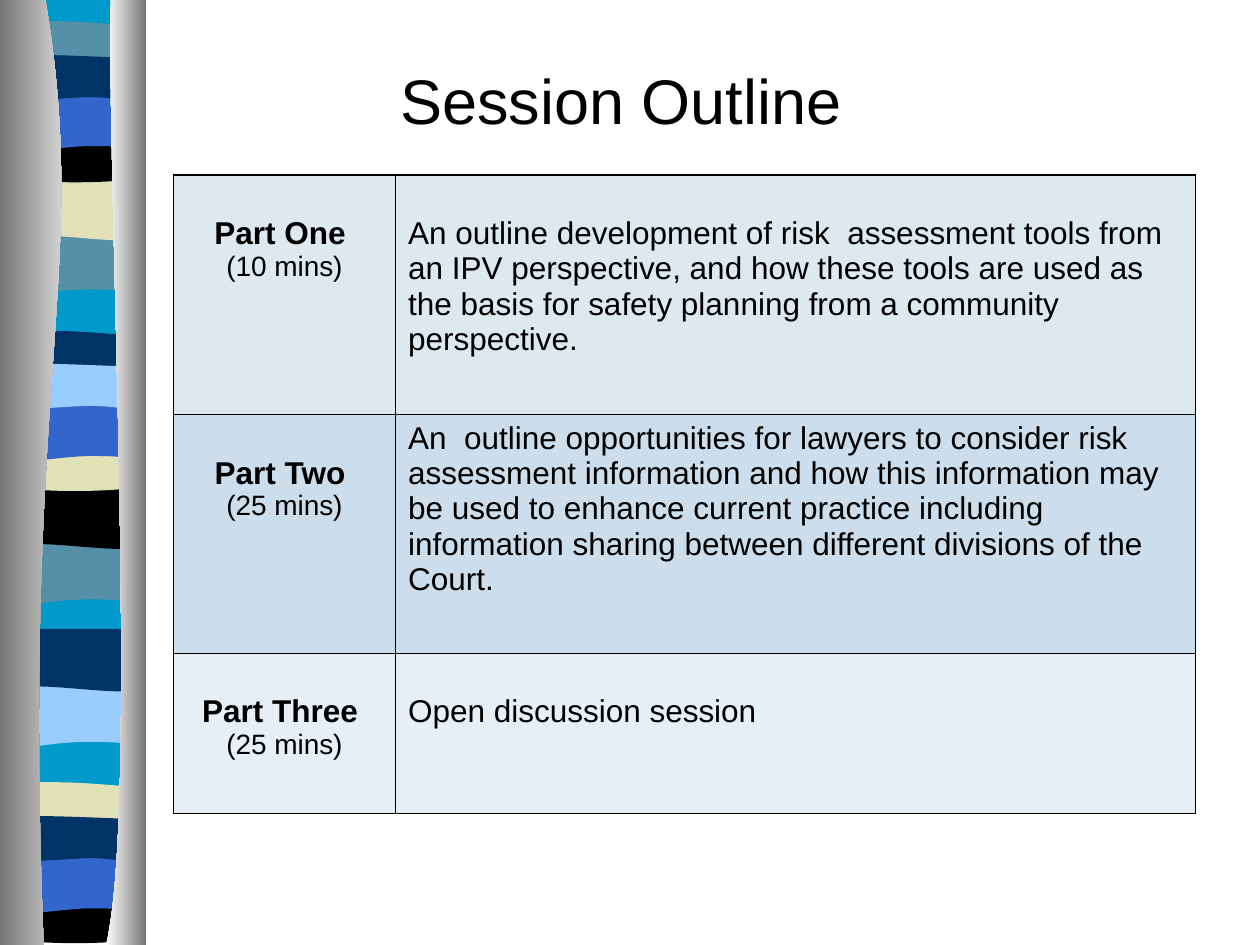
from lxml import etree
from pptx import Presentation
from pptx.dml.color import RGBColor
from pptx.enum import text
from pptx.oxml.ns import qn
from pptx.util import Pt

COLORS = {
    "black": "000000", "navy": "003366", "blue": "3366CC", "sky": "99CCFF",
    "cyan": "0099CC", "teal": "5490A8", "sand": "E1E1B7",
    "steel": "767676", "white": "FFFFFF",
    "part one": "DDE9EE", "part two": "CCDEEC", "part three": "E7EFF6",
}

# An edge of two points is straight; a longer one is a chain of cubic curves:
# a start, then three points per curve.
FLAT = [(4, 0), (82, 0)]
CREST = [(4, 0), (9, -3.6), (21, -3), (34, -3), (47, -3), (72, -0.6), (82, 0)]
DIP = [(4, 0), (52, 3.6), (66, 0), (82, 0)]
RIPPLE = [(4, 0), (15, -3.6), (57, 0), (82, 0)]

# Top edge, bottom edge, then (colour, top) of each use down the column.
STRIPES = [
    (FLAT, [(82, 34), (28, 28), (17, 39.6), (4, 34)],
     [("teal", 133.2), ("teal", 310.3), ("sky", 391.7)]),
    (FLAT, [(82, 34), (69, 39.6), (28, 29.8), (4, 34)],
     [("sand", 101.5), ("black", 277.9), ("navy", 359.3)]),
    (CREST, [(82, 17.4), (69, 20.7), (17, 20.7), (4, 17.4)],
     [("teal", 15.1), ("navy", 192.2), ("sand", 450)]),
    (DIP, [(82, 23.2), (69, 27.4), (17, 27.4), (4, 23.2)],
     [("black", 77.8), ("sand", 254.2), ("black", 512.6)]),
    (FLAT, [(82, 34), (70, 30.2), (65, 30.2), (52, 30.2),
            (39, 30.2), (16, 34), (4, 34)],
     [("blue", 53.3), ("blue", 230.4), ("blue", 488.9)]),
    (RIPPLE, [(82, 22.4), (77, 26), (65, 22.4), (52, 22.4),
              (39, 22.4), (12, 26), (4, 22.4)],
     [("navy", 33.1), ("sky", 209.5), ("navy", 468)]),
]

SESSIONS = [
    ("Part One ", "(10 mins)", 136.8, 23.4,
     "An outline development of risk  assessment tools from an IPV perspective, "
     "and how these tools are used as the basis for safety planning from a "
     "community perspective."),
    ("Part Two ", "(25 mins)", 136.5, 3.6,
     "An  outline opportunities for lawyers to consider risk assessment "
     "information and how this information may be used to enhance current "
     "practice including information sharing between different divisions of "
     "the Court."),
    ("Part Three ", "(25 mins)", 91.4, 23.4, "Open discussion session"),
]


def rgb(name):
    return RGBColor.from_string(COLORS[name])


def bend(shape, edges):
    """Join the straight segments of each curved edge into cubic curves."""
    segments = list(shape._element.iter(qn("a:lnTo")))
    start = 0
    for edge in edges:
        if len(edge) > 2:
            for i in range(start, start + len(edge) - 1, 3):
                first, *others = segments[i:i + 3]
                cubic = etree.Element(qn("a:cubicBezTo"))
                first.addprevious(cubic)
                for segment in (first, *others):
                    cubic.append(segment[0])
                    segment.getparent().remove(segment)
        start += len(edge)


class Deck:
    font = "Arial"

    def __init__(self, width, height):
        self.prs = Presentation()
        self.prs.slide_width, self.prs.slide_height = Pt(width), Pt(height)
        self.slide = self.prs.slides.add_slide(self.prs.slide_layouts[5])

    def style(self, paragraph, size, bold=False):
        for run in paragraph.runs:
            run.font.name, run.font.size, run.font.bold = self.font, Pt(size), bold
            run.font.color.rgb = rgb("black")

    def title(self, wording, left, top, width, height, size):
        title = self.slide.shapes.title
        title.left, title.top = Pt(left), Pt(top)
        title.width, title.height = Pt(width), Pt(height)
        frame = title.text_frame
        frame.text = wording
        frame.word_wrap = False
        frame.auto_size = text.MSO_AUTO_SIZE.NONE
        frame.vertical_anchor = text.MSO_ANCHOR.TOP
        frame.paragraphs[0].alignment = text.PP_ALIGN.LEFT
        self.style(frame.paragraphs[0], size)

    def outline(self, edges, *colors):
        """Closed outline, filled plain or with a left-to-right gradient."""
        corners = [(Pt(x), Pt(y)) for edge in edges for x, y in edge]
        builder = self.slide.shapes.build_freeform(*corners[0])
        builder.add_line_segments(corners[1:], close=True)
        shape = builder.convert_to_shape()
        bend(shape, edges)
        shape.shadow.inherit = False
        shape.line.fill.background()
        if len(colors) == 1:
            shape.fill.solid()
            shape.fill.fore_color.rgb = rgb(colors[0])
        else:
            shape.fill.gradient()
            shape.fill.gradient_angle = 0
            for stop, color in zip(shape.fill.gradient_stops, colors):
                stop.color.rgb = rgb(color)

    def stripe(self, upper, lower, color, top):
        self.outline([[(x, y + top) for x, y in edge] for edge in (upper, lower)],
                     color)

    def table(self, left, top, widths, heights):
        table = self.slide.shapes.add_table(
            len(heights), len(widths), Pt(left), Pt(top),
            Pt(sum(widths)), Pt(sum(heights))).table
        table.first_row = table.horz_banding = False
        for column, width in zip(table.columns, widths):
            column.width = Pt(width)
        for row, height in zip(table.rows, heights):
            row.height = Pt(height)
        return table

    def cell(self, cell, lines, fill, margin_top, align):
        """Fill a cell with (wording, size, bold) lines and frame it."""
        cell.margin_top = Pt(margin_top)
        cell.text_frame.text = "\n".join(line[0] for line in lines)
        for paragraph, (_, size, bold) in zip(cell.text_frame.paragraphs, lines):
            paragraph.alignment = align
            self.style(paragraph, size, bold)
        properties = cell._tc.get_or_add_tcPr()
        for side in ("lnL", "lnR", "lnT", "lnB"):
            line = etree.SubElement(properties, qn("a:" + side), w=str(Pt(1)))
            solid = etree.SubElement(line, qn("a:solidFill"))
            etree.SubElement(solid, qn("a:srgbClr"), val=COLORS["black"])
        cell.fill.solid()
        cell.fill.fore_color.rgb = rgb(fill)


def main():
    deck = Deck(720, 540)

    deck.outline([[(4, 0), (82, 0)], [(82, 538), (4, 538)]], "cyan")
    for upper, lower, uses in STRIPES:
        for color, top in uses:
            deck.stripe(upper, lower, color, top)
    deck.outline([[(26, 0), (52, 155.5), (12, 213), (25, 540)],
                  [(0, 540), (0, 0)]], "steel", "white")
    deck.outline([[(63.4, 0), (60.5, 90), (80, 465), (60.5, 540)],
                  [(83.5, 540), (83.5, 0)]], "white", "steel")

    deck.title("Session Outline", 221.5, 31.7, 269.3, 51, 36)

    schedule = deck.table(99.1, 100.1, [126.9, 457.1], [s[2] for s in SESSIONS])
    for row, (part, minutes, _, margin, summary) in enumerate(SESSIONS):
        fill = part.strip().lower()
        deck.cell(schedule.cell(row, 0), [(part, 18, True), (minutes, 16, False)],
                  fill, 23.4, text.PP_ALIGN.CENTER)
        deck.cell(schedule.cell(row, 1), [(summary, 18, False)],
                  fill, margin, text.PP_ALIGN.LEFT)

    deck.prs.save("out.pptx")


if __name__ == "__main__":
    main()
